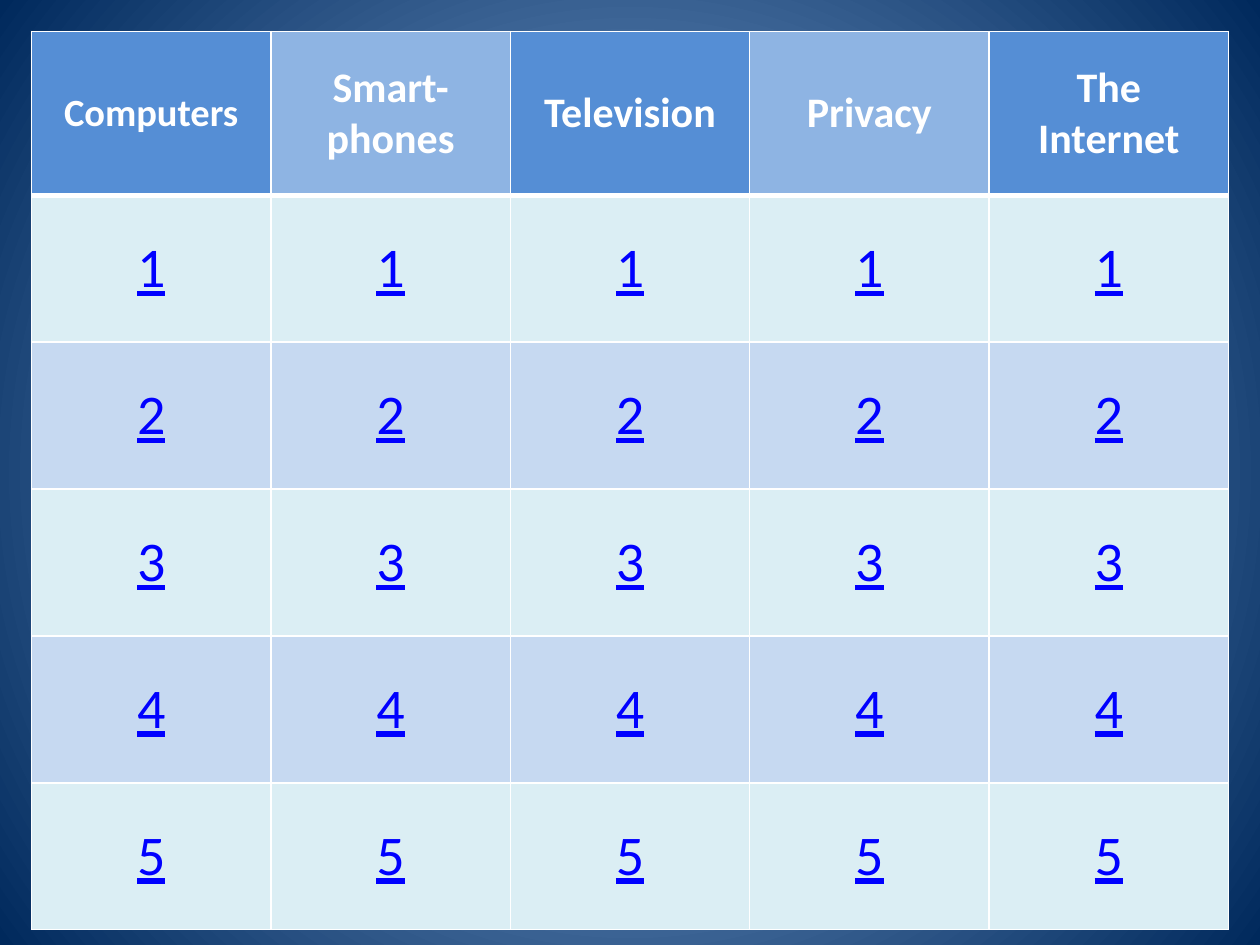
from lxml.etree import SubElement
from pptx import Presentation
from pptx.dml.color import RGBColor
from pptx.enum.text import MSO_ANCHOR as Anchor, PP_ALIGN as Align
from pptx.oxml import parse_xml
from pptx.oxml.ns import nsdecls, qn
from pptx.util import Pt

WHITE = RGBColor(0xFF, 0xFF, 0xFF)
LINK_BLUE = RGBColor(0x00, 0x00, 0xFF)
HEADER_FILLS = RGBColor(0x55, 0x8E, 0xD5), RGBColor(0x8E, 0xB4, 0xE3)
ROW_FILLS = RGBColor(0xDB, 0xEE, 0xF4), RGBColor(0xC6, 0xD9, 0xF1)
GLOW = RGBColor(0x8E, 0xB4, 0xE3)
NAVY = RGBColor(0x00, 0x29, 0x5C)

CATEGORIES = ["Computers", "Smart- phones", "Television", "Privacy", "The Internet"]
LEVELS = 5
MARGIN = Pt(18)
COLUMN_WIDTH = Pt(136.8)
HEADER_HEIGHT = Pt(93.6)
ROW_HEIGHT = Pt(83.95)
THIN, THICK = Pt(1), Pt(3)


def paint_background(page):
    """Fill the page with a gradient that radiates from its centre."""
    fill = page.background.fill
    fill.gradient()
    for stop, color, position in zip(fill.gradient_stops, (GLOW, NAVY), (0, 1)):
        stop.color.rgb = color
        stop.position = position
    linear = page.element.find(".//" + qn("a:lin"))
    radial = parse_xml(
        f'<a:path {nsdecls("a")} path="circle">'
        '<a:fillToRect l="50000" t="50000" r="50000" b="50000"/></a:path>'
    )
    linear.getparent().replace(linear, radial)


def set_borders(cell, top, bottom):
    """Draw white borders round a cell, thin at the sides."""
    properties = cell._tc.get_or_add_tcPr()
    widths = {"a:lnL": THIN, "a:lnR": THIN, "a:lnT": top, "a:lnB": bottom}
    for index, (tag, width) in enumerate(widths.items()):
        line = SubElement(properties, qn(tag), w=str(int(width)))
        solid = SubElement(line, qn("a:solidFill"))
        SubElement(solid, qn("a:srgbClr"), val=str(WHITE))
        properties.insert(index, line)


def fill_cell(cell, text, fill, size, color, bold=False, underline=False):
    """Write centred text in a cell of one colour."""
    cell.text = text
    cell.vertical_anchor = Anchor.MIDDLE
    cell.fill.solid()
    cell.fill.fore_color.rgb = fill
    para = cell.text_frame.paragraphs[0]
    para.alignment = Align.CENTER
    font = para.font
    font.name = "Calibri"
    font.size = size
    font.bold = bold
    font.underline = underline
    font.color.rgb = color


def add_board(page):
    """Add the board of categories and numbered levels."""
    columns = len(CATEGORIES)
    frame = page.shapes.add_table(
        LEVELS + 1, columns, MARGIN, MARGIN,
        COLUMN_WIDTH * columns, HEADER_HEIGHT + ROW_HEIGHT * LEVELS,
    )
    board = frame.table
    for column in board.columns:
        column.width = COLUMN_WIDTH
    for level, row in enumerate(board.rows):
        row.height = ROW_HEIGHT if level else HEADER_HEIGHT
        for index, cell in enumerate(row.cells):
            if level:
                fill = ROW_FILLS[(level - 1) % 2]
                fill_cell(cell, str(level), fill, Pt(32), LINK_BLUE, underline=True)
            else:
                size = Pt(24) if index else Pt(22)
                fill = HEADER_FILLS[index % 2]
                fill_cell(cell, CATEGORIES[index], fill, size, WHITE, bold=True)
            set_borders(
                cell,
                top=THICK if level == 1 else THIN,
                bottom=THIN if level else THICK,
            )


def main():
    """Build the deck and save it."""
    deck = Presentation()
    deck.slide_width, deck.slide_height = Pt(720), Pt(540)
    page = deck.slides.add_slide(deck.slide_layouts[6])
    paint_background(page)
    add_board(page)
    deck.save("out.pptx")


if __name__ == "__main__":
    main()
